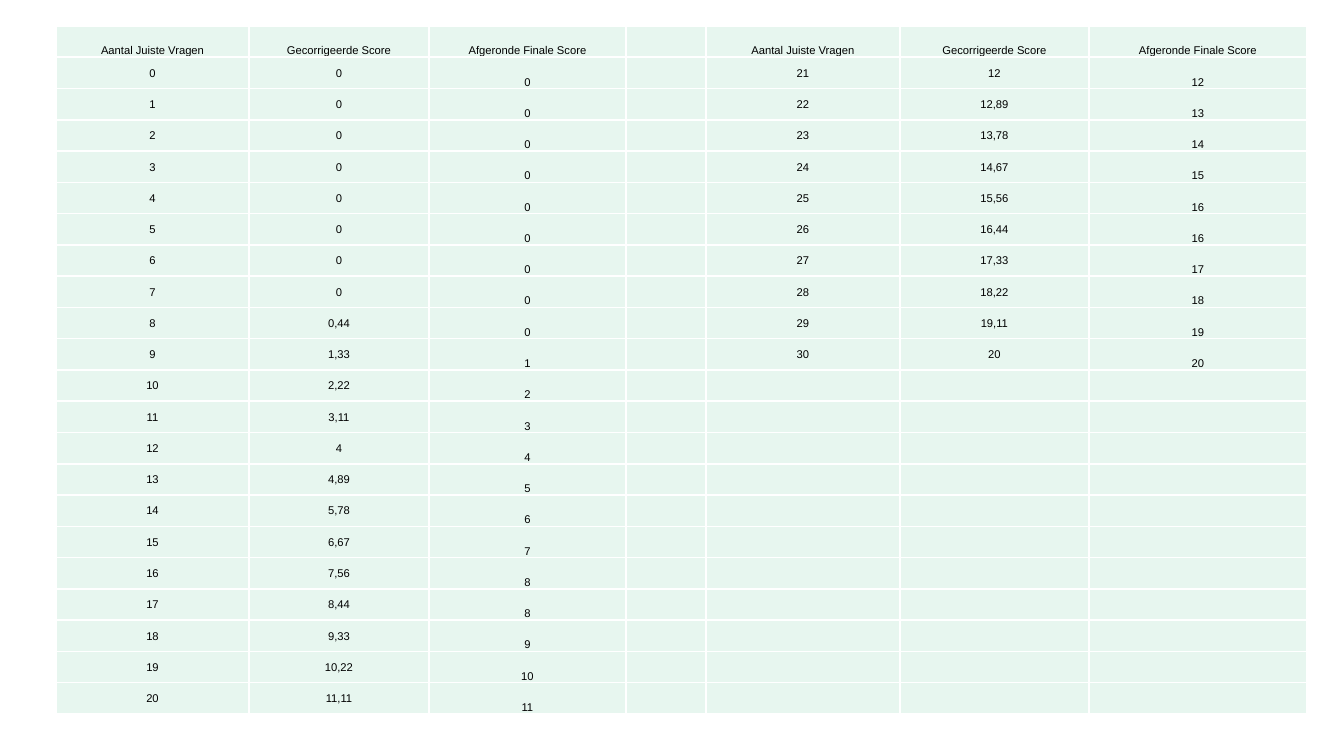
from dataclasses import dataclass

from lxml import etree
from pptx import Presentation
from pptx.dml.color import RGBColor
from pptx.enum.text import MSO_ANCHOR, PP_ALIGN
from pptx.oxml.ns import qn
from pptx.util import Emu, Pt

MIDDLE, BOTTOM = MSO_ANCHOR.MIDDLE, MSO_ANCHOR.BOTTOM
CENTER = PP_ALIGN.CENTER
PX_PER_INCH = 134.4
BLANK_LAYOUT = 6

HEADERS = ("Aantal Juiste Vragen", "Gecorrigeerde Score", "Afgeronde Finale Score")
COLUMN_WIDTHS = (193, 180, 197, 80, 194, 189, 218)
TABLE_LEFT, TABLE_TOP, TABLE_HEIGHT = 56, 26, 688
BODY_ROWS = 21
QUESTIONS, GUESS_THRESHOLD, MAX_SCORE = 30, 7.5, 20
MINT, WHITE, BLACK = "E7F6EF", "FFFFFF", "000000"
BORDER_SIDES = ("a:lnL", "a:lnR", "a:lnT", "a:lnB")


@dataclass(frozen=True)
class ScoreBlock:
    first_column: int
    first_count: int
    last_count: int


BLOCKS = (
    ScoreBlock(0, 0, BODY_ROWS - 1),
    ScoreBlock(4, BODY_ROWS, QUESTIONS),
)


def px(length: int) -> Emu:
    return Emu(round(length * 914400 / PX_PER_INCH))


def color(value: str) -> RGBColor:
    return RGBColor.from_string(value)


def apply_format(target, values: dict) -> None:
    for name, value in values.items():
        setattr(target, name, value)


def score_row(count: int) -> tuple[str, str, str]:
    score = max(0, (count - GUESS_THRESHOLD) * MAX_SCORE / (QUESTIONS - GUESS_THRESHOLD))
    return str(count), f"{round(score, 2):g}".replace(".", ","), str(round(score))


def add_borders(cell) -> None:
    properties = cell._tc.get_or_add_tcPr()
    for index, side in enumerate(BORDER_SIDES):
        line = etree.Element(qn(side), w=str(Pt(1)))
        fill = etree.SubElement(line, qn("a:solidFill"))
        etree.SubElement(fill, qn("a:srgbClr"), val=WHITE)
        properties.insert(index, line)


def style_cell(cell) -> None:
    apply_format(cell, {
        "margin_left": px(1), "margin_right": px(1),
        "margin_top": px(1), "margin_bottom": 0,
    })
    cell.fill.solid()
    cell.fill.fore_color.rgb = color(MINT)
    add_borders(cell)
    para = cell.text_frame.paragraphs[0]
    etree.SubElement(para._p, qn("a:endParaRPr"), sz="600")


def write_row(table, row: int, first_column: int, texts: tuple[str, ...], anchors: tuple) -> None:
    for column, (text, anchor) in enumerate(zip(texts, anchors), first_column):
        cell = table.cell(row, column)
        cell.vertical_anchor = anchor
        para = cell.text_frame.paragraphs[0]
        para.alignment = CENTER
        span = para.add_run()
        span.text = text
        apply_format(span.font, {"name": "Arial", "size": Pt(6), "bold": False})
        span.font.color.rgb = color(BLACK)


def add_score_table(page) -> None:
    row_count = BODY_ROWS + 1
    frame = page.shapes.add_table(
        row_count, len(COLUMN_WIDTHS), px(TABLE_LEFT), px(TABLE_TOP),
        px(sum(COLUMN_WIDTHS)), px(TABLE_HEIGHT),
    )
    table = frame.table
    apply_format(table, {"first_row": False, "horz_banding": False})
    for column, width in zip(table.columns, COLUMN_WIDTHS):
        column.width = px(width)
    for row in table.rows:
        row.height = Emu(px(TABLE_HEIGHT) // row_count)
    for cell in table.iter_cells():
        style_cell(cell)
    for block in BLOCKS:
        write_row(table, 0, block.first_column, HEADERS, (BOTTOM, BOTTOM, BOTTOM))
        for row, count in enumerate(range(block.first_count, block.last_count + 1), 1):
            write_row(table, row, block.first_column, score_row(count), (MIDDLE, MIDDLE, BOTTOM))


def main() -> None:
    deck = Presentation()
    apply_format(deck, {"slide_width": px(1344), "slide_height": px(756)})
    page = deck.slides.add_slide(deck.slide_layouts[BLANK_LAYOUT])
    add_score_table(page)
    deck.save("out.pptx")


if __name__ == "__main__":
    main()
